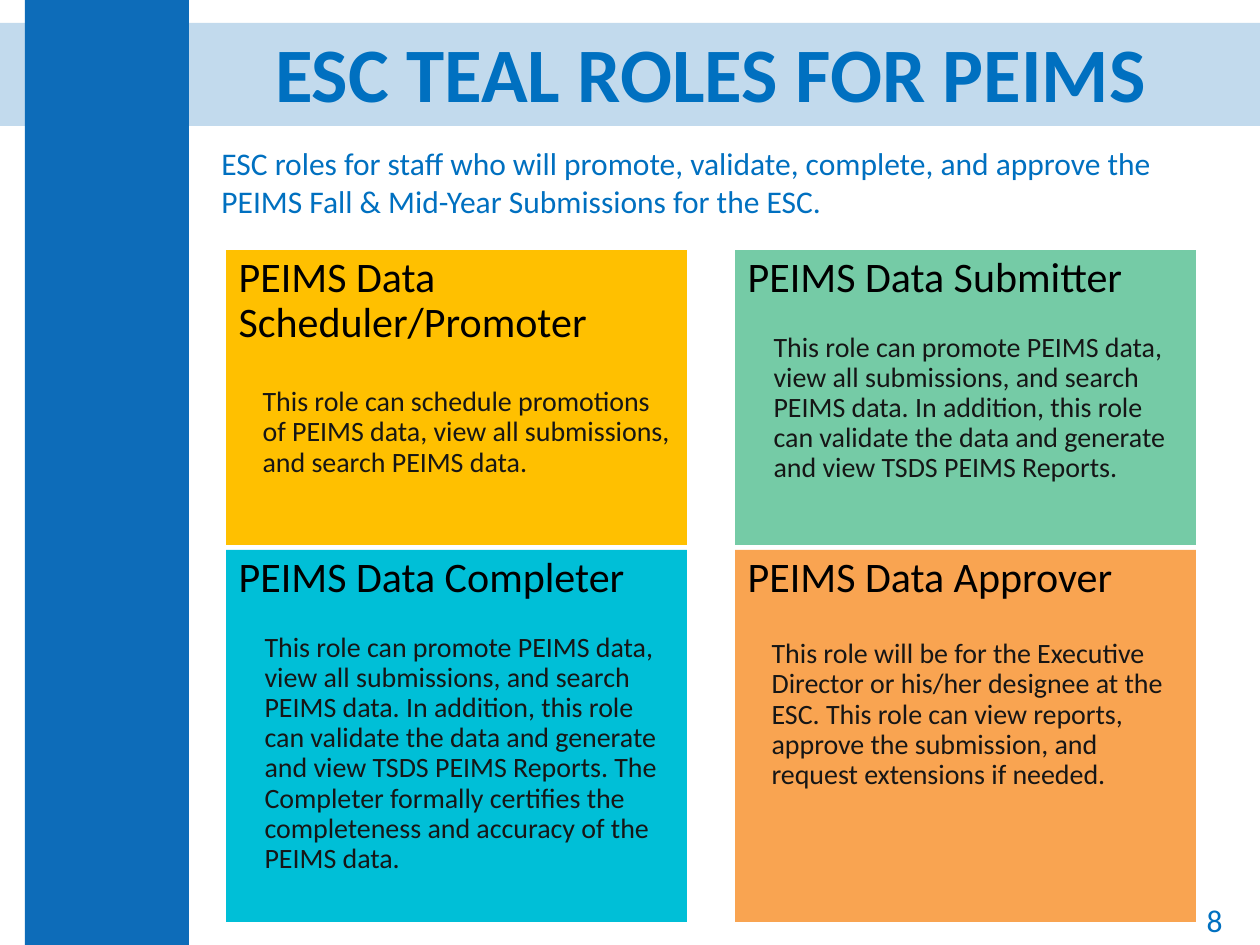
"""Build the slide describing the four ESC TEAL roles for PEIMS."""
from lxml import etree
from pptx import Presentation
from pptx.dml.color import RGBColor
from pptx.enum.shapes import MSO_SHAPE
from pptx.enum.text import MSO_ANCHOR, MSO_AUTO_SIZE, PP_ALIGN
from pptx.oxml.ns import qn
from pptx.util import Emu, Pt

RECTANGLE = MSO_SHAPE.RECTANGLE
TOP, MIDDLE = MSO_ANCHOR.TOP, MSO_ANCHOR.MIDDLE
LEFT, CENTER, RIGHT = PP_ALIGN.LEFT, PP_ALIGN.CENTER, PP_ALIGN.RIGHT
NO_AUTOFIT = MSO_AUTO_SIZE.NONE

TITLE = "ESC TEAL ROLES FOR PEIMS"
INTRO = ("ESC roles for staff who will promote, validate, complete, and approve the "
         "PEIMS Fall & Mid-Year Submissions for the ESC.")
PAGE_NUMBER = "8"
REVIEW = ("This role can promote PEIMS data, view all submissions, and search PEIMS data. "
          "In addition, this role can validate the data and generate and view TSDS PEIMS Reports.")
ROLES = [
    {"name": "PEIMS Data Scheduler/Promoter", "fill": "FFC000", "indent": 24, "gap": 23.2,
     "duty": "This role can schedule promotions of PEIMS data, view all submissions, "
             "and search PEIMS data."},
    {"name": "PEIMS Data Completer", "fill": "00BFD7", "indent": 26, "gap": 17.9,
     "duty": REVIEW + " The Completer formally certifies the completeness and accuracy "
                      "of the PEIMS data."},
    {"name": "PEIMS Data Submitter", "fill": "75CBA6", "indent": 26, "gap": 17.9,
     "duty": REVIEW},
    {"name": "PEIMS Data Approver", "fill": "F9A451", "indent": 24, "gap": 21.6,
     "duty": "This role will be for the Executive Director or his/her designee at the ESC. "
             "This role can view reports, approve the submission, and request extensions "
             "if needed."},
]

THEME = {
    "font": "Calibri",
    "rail": "0D6CB9",
    "title": {"size": 44, "color": "0070C0", "bold": True},
    "accent": {"size": 18, "color": "0070C0", "bold": False},
    "heading": {"size": 24, "color": "000000", "bold": False},
    "duty": {"size": 16, "color": "161616", "bold": False},
}
COMPARISON_LAYOUT = 4
COLUMN_LEFTS, COLUMN_WIDTH = (226, 735), 461
ROWS = ((250, 295), (550, 372))
BACKDROPS = [((0, 23, 1260, 103), 25), ((25, 0, 164, 945), 100)]


def px(length):
    return Emu(round(length * 914400 / 126))


def place(shape, box):
    for name, length in zip(("left", "top", "width", "height"), box):
        setattr(shape, name, px(length))


def prepare_frame(shape, anchor):
    frame = shape.text_frame
    settings = {"word_wrap": True, "auto_size": NO_AUTOFIT, "vertical_anchor": anchor}
    for name, value in settings.items():
        setattr(frame, name, value)
    return frame


def write(paragraph, text, style, indent=0, **layout):
    properties = paragraph._p.get_or_add_pPr()
    properties.set("marL", str(px(indent)))
    properties.set("indent", "0")
    etree.SubElement(properties, qn("a:buNone"))
    paragraph.text = text
    settings = {"alignment": LEFT, "line_spacing": 0.9, "space_before": Pt(0)} | layout
    for name, value in settings.items():
        setattr(paragraph, name, value)
    font = paragraph.runs[0].font
    for name, value in {"name": THEME["font"], "size": Pt(style["size"]),
                        "bold": style["bold"]}.items():
        setattr(font, name, value)
    font.color.rgb = RGBColor.from_string(style["color"])


def add_backdrop(slide, box, opacity, depth):
    shape = slide.shapes.add_shape(RECTANGLE, *map(px, box))
    shape.shadow.inherit = False
    shape.line.fill.background()
    shape.fill.solid()
    shape.fill.fore_color.rgb = RGBColor.from_string(THEME["rail"])
    if opacity < 100:
        color = shape._element.spPr.find(".//" + qn("a:srgbClr"))
        etree.SubElement(color, qn("a:alpha"), val=str(opacity * 1000))
    slide.shapes._spTree.insert(2 + depth, shape._element)


def add_text(slide, box, text, anchor, **layout):
    frame = prepare_frame(slide.shapes.add_textbox(*map(px, box)), anchor)
    write(frame.paragraphs[0], text, THEME["accent"], line_spacing=1.0, **layout)


def fill_role(shape, role, box):
    place(shape, box)
    shape.fill.solid()
    shape.fill.fore_color.rgb = RGBColor.from_string(role["fill"])
    frame = prepare_frame(shape, TOP)
    write(frame.paragraphs[0], role["name"], THEME["heading"])
    write(frame.add_paragraph(), role["duty"], THEME["duty"], role["indent"],
          space_before=Pt(role["gap"]))


def main():
    presentation = Presentation()
    presentation.slide_width, presentation.slide_height = px(1260), px(945)
    slide = presentation.slides.add_slide(presentation.slide_layouts[COMPARISON_LAYOUT])

    for depth, (box, opacity) in enumerate(BACKDROPS):
        add_backdrop(slide, box, opacity, depth)

    title = slide.shapes.title
    place(title, (226, 48, 970, 59))
    write(prepare_frame(title, MIDDLE).paragraphs[0], TITLE, THEME["title"], alignment=CENTER)

    for index, role in enumerate(ROLES):
        column, row = divmod(index, len(ROWS))
        top, height = ROWS[row]
        box = (COLUMN_LEFTS[column], top, COLUMN_WIDTH, height)
        fill_role(slide.placeholders[index + 1], role, box)

    add_text(slide, (209, 138, 1000, 89), INTRO, TOP)
    add_text(slide, (951, 895, 284, 50), PAGE_NUMBER, MIDDLE, alignment=RIGHT)
    presentation.save("out.pptx")


if __name__ == "__main__":
    main()
